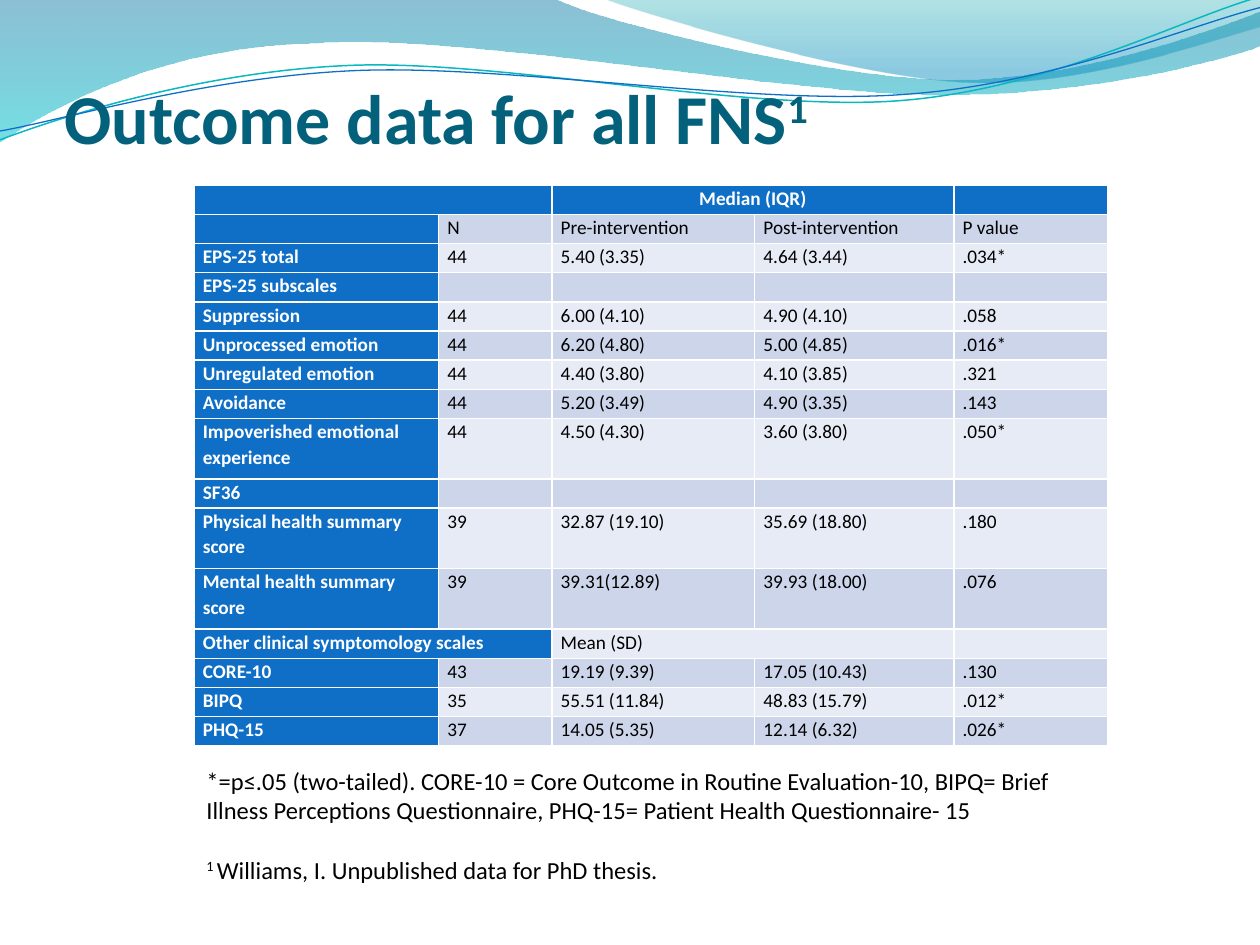
from dataclasses import dataclass
from math import cos, radians, sin
from typing import Optional

from lxml.etree import SubElement
from pptx import Presentation
from pptx.dml.color import RGBColor
from pptx.enum.text import MSO_ANCHOR, MSO_AUTO_SIZE, PP_ALIGN
from pptx.oxml.ns import qn
from pptx.util import Inches, Pt

COLORS = {
    "title": "04617B", "accent": "0F6FC6", "teal": "0AB8BF",
    "band_dark": "CCD5EA", "band_light": "E7EBF5",
    "white": "FFFFFF", "black": "000000",
    "wave_blue": "0074A1", "wave_cyan": "00C6CF",
    "crest_teal": "00A1A9", "crest_blue": "008BBF",
}
FONT = "Calibri"


@dataclass
class GradientStop:
    position: float
    color: str
    opacity: int


@dataclass
class Wave:
    frame: tuple  # left, top, width, height before rotation
    start: tuple
    segments: list  # two numbers: straight line; six numbers: Bezier curve
    gradient: Optional[list] = None
    line_color: Optional[str] = None
    line_width: float = 0
    rotation: float = 0


WAVES = [
    Wave((-0.01, -0.01, 10.02, 1.14), (0, 0),
         [(4.4, -0.01), (4.76, 0.17, 6.64, 0.63, 7.58, 0.63),
          (8.53, 0.63, 9.58, 0.26, 10, 0.09), (10.01, 0.36),
          (9.83, 0.44, 8.7, 0.76, 7.46, 0.75),
          (6.22, 0.75, 3.82, 0.28, 2.57, 0.34),
          (1.29, 0.36, 0.46, 0.83, -0.01, 1.13), (0, 0)],
         gradient=[GradientStop(0, "wave_blue", 45), GradientStop(1, "wave_cyan", 55)]),
    Wave((4.79, -0.01, 5.21, 0.7), (4.79, -0.01),
         [(5.09, 0.11, 6.82, 0.62, 7.69, 0.65),
          (8.56, 0.69, 9.61, 0.32, 10, 0.21), (10, 0), (4.79, -0.01)],
         gradient=[GradientStop(0, "crest_teal", 30), GradientStop(0.8, "crest_blue", 45)]),
    Wave((-0.02, 0.22, 10.02, 0.71), (0, 1.11),
         [(0.48, 0.93, 1.58, 0.57, 2.77, 0.52),
          (3.95, 0.47, 5.93, 0.89, 7.13, 0.8),
          (8.33, 0.71, 9.38, 0.15, 9.98, -0.02)],
         line_color="teal", line_width=0.85, rotation=-2.7),
    Wave((-0.02, 0.3, 10.03, 0.58), (0, 1.04),
         [(0.47, 0.96, 1.64, 0.61, 2.83, 0.56),
          (4.03, 0.51, 5.97, 0.84, 7.17, 0.75),
          (8.36, 0.67, 9.41, 0.21, 10, 0.06)],
         line_color="accent", line_width=0.75, rotation=-2.7),
]

COLUMN_WIDTHS = [1.94, 0.9, 1.61, 1.58, 1.22]
TABLE_HEIGHT, TALL_ROW_HEIGHT = 4.45, 0.48
TALL_ROWS = {8, 10, 11}
MERGED_ROWS = {0, 12}
ROWS = [
    ("", "", "Median (IQR)", "", ""),
    ("", "N", "Pre-intervention", "Post-intervention", "P value"),
    ("EPS-25 total", "44", "5.40 (3.35)", "4.64 (3.44)", ".034*"),
    ("EPS-25 subscales", "", "", "", ""),
    ("Suppression", "44", "6.00 (4.10)", "4.90 (4.10)", ".058"),
    ("Unprocessed emotion", "44", "6.20 (4.80)", "5.00 (4.85)", ".016*"),
    ("Unregulated emotion", "44", "4.40 (3.80)", "4.10 (3.85)", ".321"),
    ("Avoidance", "44", "5.20 (3.49)", "4.90 (3.35)", ".143"),
    ("Impoverished emotional experience", "44", "4.50 (4.30)", "3.60 (3.80)", ".050*"),
    ("SF36", "", "", "", ""),
    ("Physical health summary score", "39", "32.87 (19.10)", "35.69 (18.80)", ".180"),
    ("Mental health summary score", "39", "39.31(12.89)", "39.93 (18.00)", ".076"),
    ("Other clinical symptomology scales", "", "Mean (SD)", "", ""),
    ("CORE-10", "43", "19.19 (9.39)", "17.05 (10.43)", ".130"),
    ("BIPQ", "35", "55.51 (11.84)", "48.83 (15.79)", ".012*"),
    ("PHQ-15", "37", "14.05 (5.35)", "12.14 (6.32)", ".026*"),
]


def rgb(name: str) -> RGBColor:
    return RGBColor.from_string(COLORS[name])


def add_text(paragraph, text: str, *, size: float, color: str = "black",
             bold: bool = False, superscript: bool = False) -> None:
    run = paragraph.add_run()
    run.text = text
    run.font.name = FONT
    run.font.size = Pt(size)
    run.font.bold = bold
    run.font.color.rgb = rgb(color)
    if superscript:
        run._r.get_or_add_rPr().set("baseline", "30000")


def to_frame(wave: Wave, x: float, y: float) -> tuple:
    """Turn a slide position into one inside the unrotated frame."""
    left, top, width, height = wave.frame
    across, down = x - left - width / 2, y - top - height / 2
    angle = radians(-wave.rotation)
    return (across * cos(angle) - down * sin(angle) + width / 2,
            across * sin(angle) + down * cos(angle) + height / 2)


def curve_outline(shape, wave: Wave) -> None:
    """Give the freeform Bezier segments, which the builder cannot draw."""
    outline = next(shape.element.iter(qn("a:path")))
    for child in list(outline):
        outline.remove(child)
    outline.set("w", str(shape.width))
    outline.set("h", str(shape.height))
    commands = [("moveTo", wave.start)]
    commands += [("lnTo" if len(segment) == 2 else "cubicBezTo", segment)
                 for segment in wave.segments]
    for command, numbers in commands:
        element = SubElement(outline, qn(f"a:{command}"))
        for x, y in zip(numbers[::2], numbers[1::2]):
            point = SubElement(element, qn("a:pt"))
            for axis, value in zip("xy", to_frame(wave, x, y)):
                point.set(axis, str(Inches(value)))
    if wave.gradient:
        SubElement(outline, qn("a:close"))


def draw_wave(slide, wave: Wave) -> None:
    builder = slide.shapes.build_freeform(*map(Inches, wave.start))
    builder.add_line_segments([tuple(map(Inches, segment[-2:])) for segment in wave.segments],
                              close=False)
    shape = builder.convert_to_shape()
    shape.left, shape.top, shape.width, shape.height = map(Inches, wave.frame)
    shape.rotation = wave.rotation
    curve_outline(shape, wave)
    shape.shadow.inherit = False
    if wave.gradient is None:
        shape.fill.background()
        shape.line.color.rgb = rgb(wave.line_color)
        shape.line.width = Pt(wave.line_width)
        return
    shape.line.fill.background()
    shape.fill.gradient()
    shape.fill.gradient_angle = 270
    for stop, setting in zip(shape.fill.gradient_stops, wave.gradient):
        stop.position = setting.position
        stop.color.rgb = rgb(setting.color)
    for color, setting in zip(shape.element.spPr.iter(qn("a:srgbClr")), wave.gradient):
        SubElement(color, qn("a:alpha")).set("val", str(setting.opacity * 1000))


def fill_cell(cell, text: str, row_index: int, column_index: int) -> None:
    accented = row_index == 0 or column_index == 0
    band = "band_dark" if row_index % 2 else "band_light"
    cell.fill.solid()
    cell.fill.fore_color.rgb = rgb("accent" if accented else band)
    cell.margin_left = cell.margin_right = Inches(0.07)
    cell.margin_top = cell.margin_bottom = 0
    paragraph = cell.text_frame.paragraphs[0]
    paragraph.line_spacing = 1.07
    paragraph.space_after = Pt(8)
    paragraph.alignment = PP_ALIGN.CENTER if row_index == 0 else PP_ALIGN.LEFT
    if text:
        add_text(paragraph, text, size=11, color="white" if accented else "black", bold=accented)
    else:
        SubElement(paragraph._p, qn("a:endParaRPr")).set("sz", "1100")


def draw_table(slide) -> None:
    row_height = (TABLE_HEIGHT - len(TALL_ROWS) * TALL_ROW_HEIGHT) / (len(ROWS) - len(TALL_ROWS))
    table = slide.shapes.add_table(len(ROWS), len(COLUMN_WIDTHS), Inches(1.54), Inches(1.47),
                                   Inches(sum(COLUMN_WIDTHS)), Inches(TABLE_HEIGHT)).table
    table.first_col = True
    for column, width in zip(table.columns, COLUMN_WIDTHS):
        column.width = Inches(width)
    for row_index, values in enumerate(ROWS):
        height = TALL_ROW_HEIGHT if row_index in TALL_ROWS else row_height
        table.rows[row_index].height = Inches(height)
        for column_index, text in enumerate(values):
            fill_cell(table.cell(row_index, column_index), text, row_index, column_index)
    for row_index in MERGED_ROWS:
        for first in (0, 2):
            table.cell(row_index, first).merge(table.cell(row_index, first + 1))


def draw_title(slide) -> None:
    title = slide.shapes.title
    title.left, title.top, title.width, title.height = map(Inches, (0.51, 0.01, 9, 1.25))
    frame = title.text_frame
    frame.auto_size = MSO_AUTO_SIZE.NONE
    frame.vertical_anchor = MSO_ANCHOR.BOTTOM
    frame.margin_left = frame.margin_right = frame.margin_bottom = 0
    frame.margin_top = Inches(0.05)
    paragraph = frame.paragraphs[0]
    paragraph.alignment = PP_ALIGN.LEFT
    add_text(paragraph, "Outcome data for all FNS", size=40, color="title", bold=True)
    add_text(paragraph, "1", size=40, color="title", bold=True, superscript=True)
    slide.shapes.element.append(title.element)  # in front of the waves


def draw_footnotes(slide) -> None:
    frame = slide.shapes.add_textbox(Inches(1.54), Inches(6.03), Inches(7.32), Inches(1.35)).text_frame
    frame.word_wrap = True
    add_text(frame.paragraphs[0], "*=p≤.05 (two-tailed). CORE-10 = Core Outcome in Routine "
             "Evaluation-10, BIPQ= Brief Illness Perceptions Questionnaire, "
             "PHQ-15= Patient Health Questionnaire- 15", size=14)
    citation = frame.add_paragraph()
    citation.space_before = Pt(17)
    add_text(citation, "1 ", size=14, superscript=True)
    add_text(citation, "Williams, I. Unpublished data for PhD thesis.", size=14)


def main() -> None:
    presentation = Presentation()
    presentation.slide_width, presentation.slide_height = Inches(10), Inches(7.5)
    slide = presentation.slides.add_slide(presentation.slide_layouts[5])
    for wave in WAVES:
        draw_wave(slide, wave)
    draw_title(slide)
    draw_table(slide)
    draw_footnotes(slide)
    presentation.save("out.pptx")


if __name__ == "__main__":
    main()
